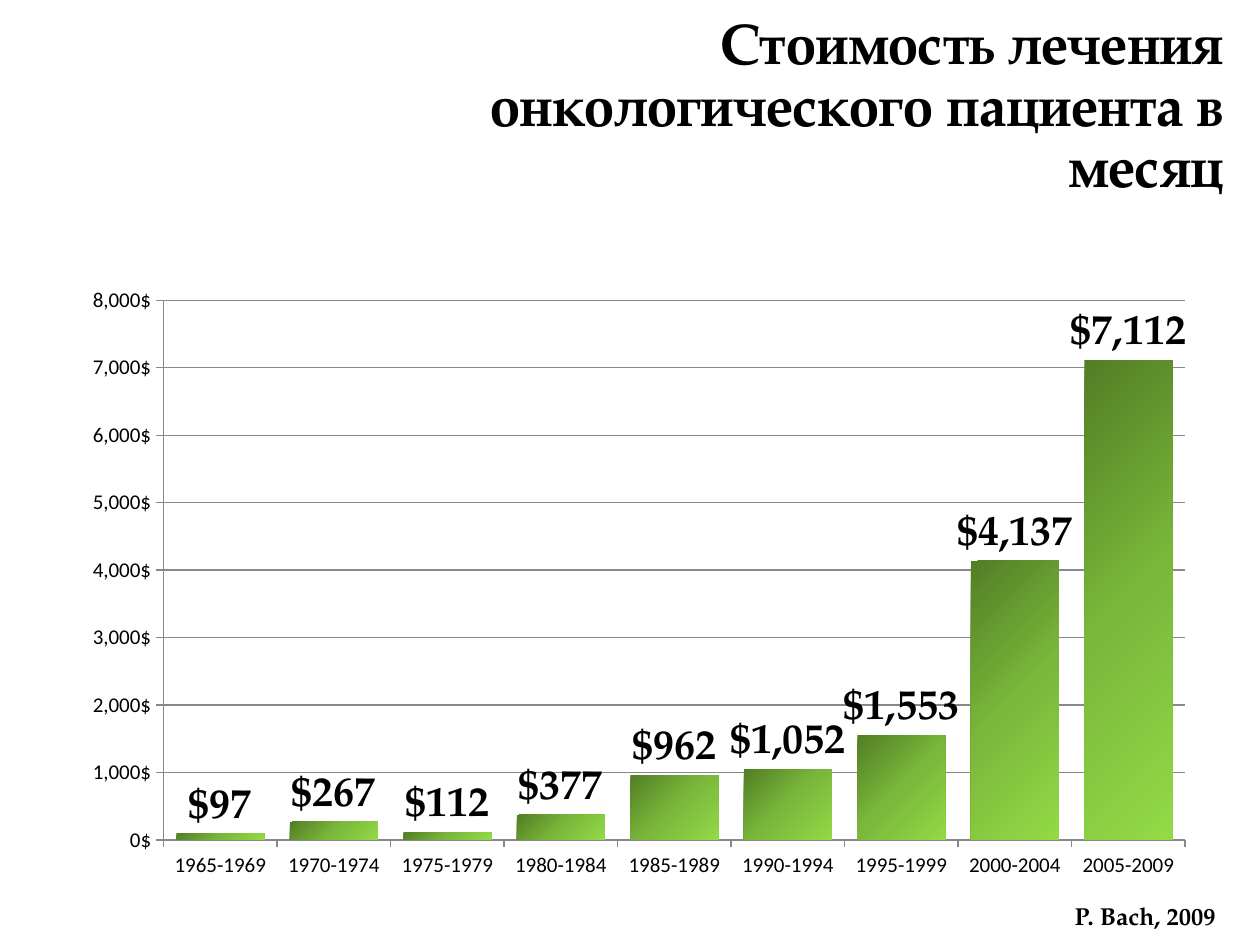
import lxml.etree
import pptx
import pptx.chart.data
import pptx.dml.color
import pptx.enum.chart
import pptx.enum.text
import pptx.oxml
import pptx.oxml.ns
import pptx.util

Pt = pptx.util.Pt
PERIODS = [f"{year}-{year + 4}" for year in range(1965, 2010, 5)]
MONTHLY_COSTS = [97, 267, 112, 377, 962, 1052, 1553, 4137, 7112]
BAR_GRADIENT = [(0, "537E25"), (50, "7AB73A"), (100, "92DA46")]
PLOT_AREA = {"x": 0.083, "y": 0.126, "w": 0.911, "h": 0.779}


def color(hex_string):
    return pptx.dml.color.RGBColor.from_string(hex_string)


class CostSlide:
    serif = "TeX Gyre Pagella"
    sans = "Calibri"
    ink = "000000"
    grid = "888888"

    def __init__(self, presentation):
        self.slide = presentation.slides.add_slide(presentation.slide_layouts[5])

    def style_font(self, font, name, size, bold=False):
        font.name, font.size, font.bold = name, Pt(size), bold
        font.color.rgb = color(self.ink)

    def add_text(self, frame, text, size, alignment):
        frame.word_wrap = True
        paragraph = frame.paragraphs[0]
        paragraph.alignment = alignment
        run = paragraph.add_run()
        run.text = text
        self.style_font(run.font, self.serif, size, bold=True)
        return paragraph

    def title(self, text, left, top, width, height):
        shape = self.slide.shapes.title
        shape.left, shape.top = Pt(left), Pt(top)
        shape.width, shape.height = Pt(width), Pt(height)
        frame = shape.text_frame
        frame.auto_size = pptx.enum.text.MSO_AUTO_SIZE.NONE
        frame.vertical_anchor = pptx.enum.text.MSO_ANCHOR.MIDDLE
        paragraph = self.add_text(frame, text, 32.4, pptx.enum.text.PP_ALIGN.RIGHT)
        paragraph.line_spacing = 0.9
        paragraph.space_before = Pt(0)

    def credit(self, text, left, top, width, height):
        box = self.slide.shapes.add_textbox(Pt(left), Pt(top), Pt(width), Pt(height))
        self.add_text(box.text_frame, text, 14, pptx.enum.text.PP_ALIGN.CENTER)

    def column_chart(self, categories, values, left, top, width, height):
        data = pptx.chart.data.CategoryChartData()
        data.categories = categories
        data.add_series("Series 1", values)
        chart = self.slide.shapes.add_chart(
            pptx.enum.chart.XL_CHART_TYPE.COLUMN_CLUSTERED,
            Pt(left), Pt(top), Pt(width), Pt(height), data).chart
        chart.has_legend = False
        chart.has_title = False
        self.style_font(chart.font, self.sans, 18)
        for axis in (chart.category_axis, chart.value_axis):
            self.style_axis(axis)
        self.scale_values(chart.value_axis)

        plot = chart.plots[0]
        plot.gap_width = 29
        plot.vary_by_categories = False
        self.fill_gradient(plot.series[0], BAR_GRADIENT, 45)
        self.label_values(plot.series[0].data_labels)
        self.place_plot(chart, PLOT_AREA)

    def style_axis(self, axis):
        axis.major_tick_mark = pptx.enum.chart.XL_TICK_MARK.OUTSIDE
        axis.minor_tick_mark = pptx.enum.chart.XL_TICK_MARK.NONE
        axis.format.line.color.rgb = color(self.grid)
        axis.format.line.width = Pt(0.75)
        self.style_font(axis.tick_labels.font, self.sans, 12)

    def scale_values(self, axis):
        axis.minimum_scale, axis.maximum_scale, axis.major_unit = 0, 8000, 1000
        axis.tick_label_position = pptx.enum.chart.XL_TICK_LABEL_POSITION.LOW
        axis.tick_labels.number_format = "#,##0[$$-540A]"
        axis.tick_labels.number_format_is_linked = False
        axis.has_major_gridlines = True
        axis.major_gridlines.format.line.color.rgb = color(self.grid)
        axis.major_gridlines.format.line.width = Pt(0.75)

    def label_values(self, labels):
        labels.show_value = True
        labels.number_format = "[$$-540A]#,##0"
        labels.number_format_is_linked = False
        labels.position = pptx.enum.chart.XL_LABEL_POSITION.OUTSIDE_END
        self.style_font(labels.font, self.serif, 24, bold=True)

    def fill_gradient(self, series, stops, angle):
        """Fill the columns with (percent, colour) stops, clockwise angle in degrees."""
        stop_xml = "".join(
            f'<a:gs pos="{percent * 1000}"><a:srgbClr val="{value}"/></a:gs>'
            for percent, value in stops)
        series.format.line.fill.background()
        properties = series._element.get_or_add_spPr()
        properties.insert(0, pptx.oxml.parse_xml(
            f'<a:gradFill {pptx.oxml.ns.nsdecls("a")} rotWithShape="1">'
            f'<a:gsLst>{stop_xml}</a:gsLst>'
            f'<a:lin ang="{angle * 60000}" scaled="0"/></a:gradFill>'))

    def place_plot(self, chart, area):
        """Fix the inner plot area, given as fractions of the chart."""
        plot_area = chart._chartSpace.chart.plotArea
        tag = pptx.oxml.ns.qn
        for layout in plot_area.findall(tag("c:layout")):
            plot_area.remove(layout)
        layout = lxml.etree.Element(tag("c:layout"))
        manual = lxml.etree.SubElement(layout, tag("c:manualLayout"))
        settings = {"layoutTarget": "inner", "xMode": "edge", "yMode": "edge", **area}
        for name, value in settings.items():
            lxml.etree.SubElement(manual, tag(f"c:{name}")).set("val", str(value))
        plot_area.insert(0, layout)


def main():
    presentation = pptx.Presentation()
    presentation.slide_width, presentation.slide_height = Pt(720), Pt(540)
    slide = CostSlide(presentation)
    slide.title("Стоимость лечения онкологического пациента в месяц",
                206.64, 16.56, 499.68, 90)
    slide.credit("P. Bach, 2009", 576.72, 511.2, 155.52, 24.48)
    slide.column_chart(PERIODS, MONTHLY_COSTS, 40.32, 121.68, 640.8, 396)
    presentation.save("out.pptx")


if __name__ == "__main__":
    main()
